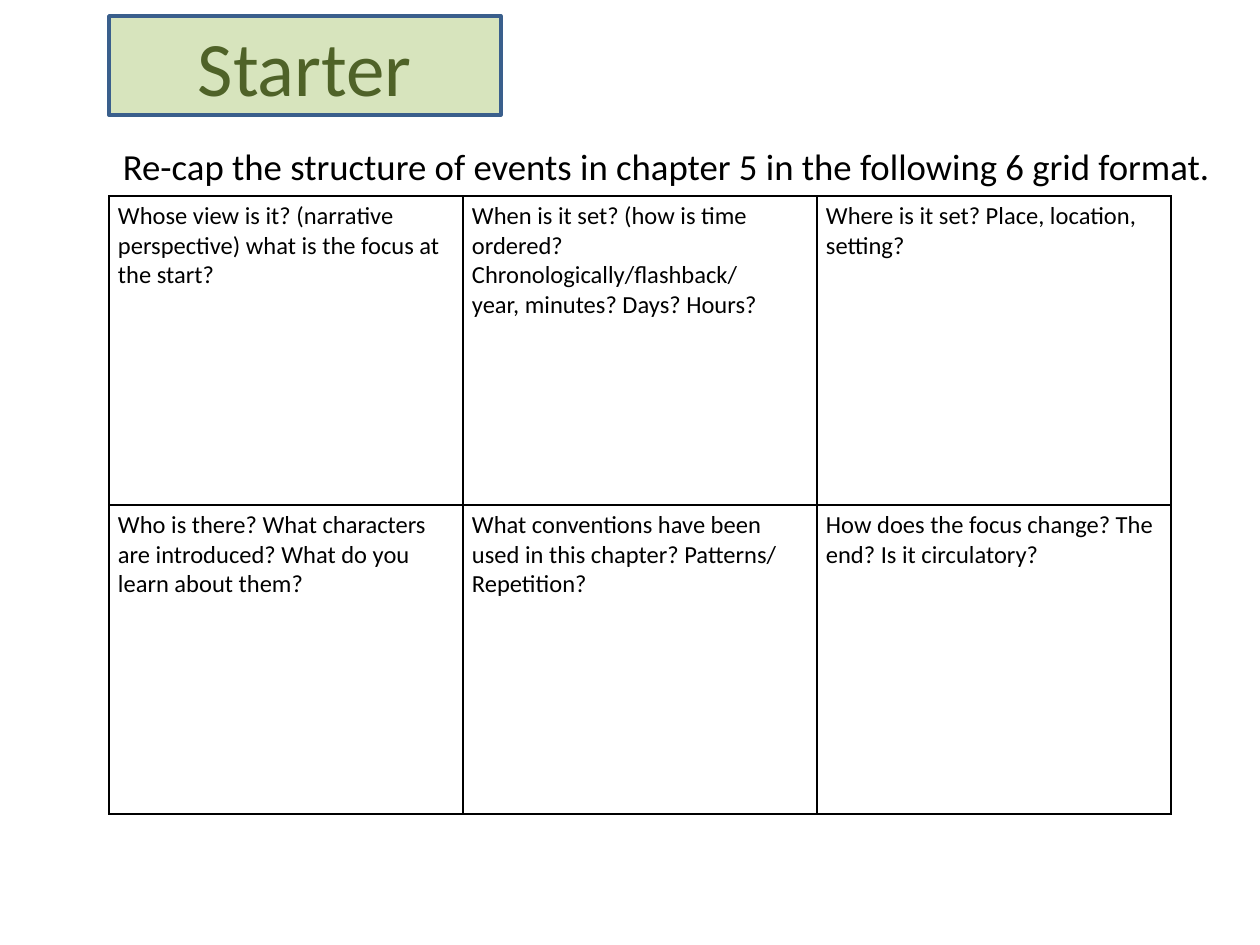
"""Build the chapter 5 starter slide with its six-question grid."""
from lxml import etree
from pptx import Presentation
from pptx.dml.color import RGBColor
from pptx.enum.shapes import MSO_SHAPE
from pptx.enum.text import MSO_ANCHOR, PP_ALIGN
from pptx.oxml.ns import qn
from pptx.util import Emu, Pt

RECT = MSO_SHAPE.RECTANGLE
MIDDLE = MSO_ANCHOR.MIDDLE
LEFT, CENTER = PP_ALIGN.LEFT, PP_ALIGN.CENTER

FONT = "Calibri"
COLORS = {"ink": "000000", "paper": "FFFFFF", "badge": "D7E4BD",
          "edge": "3A5F8C", "olive": "4F6228"}
BADGE = "Starter"
TASK = "Re-cap the structure of events in chapter 5 in the following 6 grid format."
GRID = [
    [["Whose view is it? (narrative perspective) what is the focus at the start?"],
     ["When is it set? (how is time ordered? Chronologically/flashback/",
      "year, minutes? Days? Hours?"],
     ["Where is it set? Place, location, setting?"]],
    [["Who is there? What characters are introduced? What do you learn about them?"],
     ["What conventions have been used in this chapter? Patterns/ Repetition?"],
     ["How does the focus change? The end? Is it circulatory?"]],
]
EDGE_X = 109
COL_W, ROW_H = 354, 309


def px(n):
    return Emu(round(n * 914400 / 126))


def box(*sides):
    return [px(n) for n in sides]


def color(name):
    return RGBColor.from_string(COLORS[name])


def write(frame, lines, size, ink="ink", align=LEFT):
    frame.word_wrap = True
    for i, line in enumerate(lines):
        para = frame.add_paragraph() if i else frame.paragraphs[0]
        para.alignment = align
        run = para.add_run()
        run.text = line
        run.font.name = FONT
        run.font.size = Pt(size)
        run.font.color.rgb = color(ink)


def border(cell):
    props = cell._tc.get_or_add_tcPr()
    for i, side in enumerate(("lnL", "lnR", "lnT", "lnB")):
        line = etree.Element(qn(f"a:{side}"), w=str(Pt(1)))
        fill = etree.SubElement(line, qn("a:solidFill"))
        etree.SubElement(fill, qn("a:srgbClr"), val=COLORS["ink"])
        props.insert(i, line)


def add_task(slide):
    frame = slide.shapes.add_textbox(*box(EDGE_X, 135, 1115, 62)).text_frame
    frame.vertical_anchor = MIDDLE
    write(frame, [TASK], 21, align=CENTER)


def add_grid(slide):
    rows, cols = len(GRID), len(GRID[0])
    area = box(EDGE_X, 196, cols * COL_W, rows * ROW_H)
    table = slide.shapes.add_table(rows, cols, *area).table
    table.first_row = table.horz_banding = False
    for col in table.columns:
        col.width = px(COL_W)
    for row, texts in zip(table.rows, GRID):
        row.height = px(ROW_H)
        for cell, lines in zip(row.cells, texts):
            cell.margin_left = cell.margin_right = px(9)
            cell.margin_top = cell.margin_bottom = px(5)
            cell.fill.solid()
            cell.fill.fore_color.rgb = color("paper")
            border(cell)
            write(cell.text_frame, lines, 14)


def add_badge(slide):
    badge = slide.shapes.add_shape(RECT, *box(EDGE_X, 16, 392, 99))
    badge.shadow.inherit = False
    badge.fill.solid()
    badge.fill.fore_color.rgb = color("badge")
    badge.line.color.rgb = color("edge")
    badge.line.width = Pt(2)
    badge.text_frame.vertical_anchor = MIDDLE
    write(badge.text_frame, [BADGE], 44, "olive", CENTER)


def main():
    deck = Presentation()
    deck.slide_width, deck.slide_height = box(1260, 945)
    slide = deck.slides.add_slide(deck.slide_layouts[6])
    add_task(slide)
    add_grid(slide)
    add_badge(slide)
    deck.save("out.pptx")


if __name__ == "__main__":
    main()
